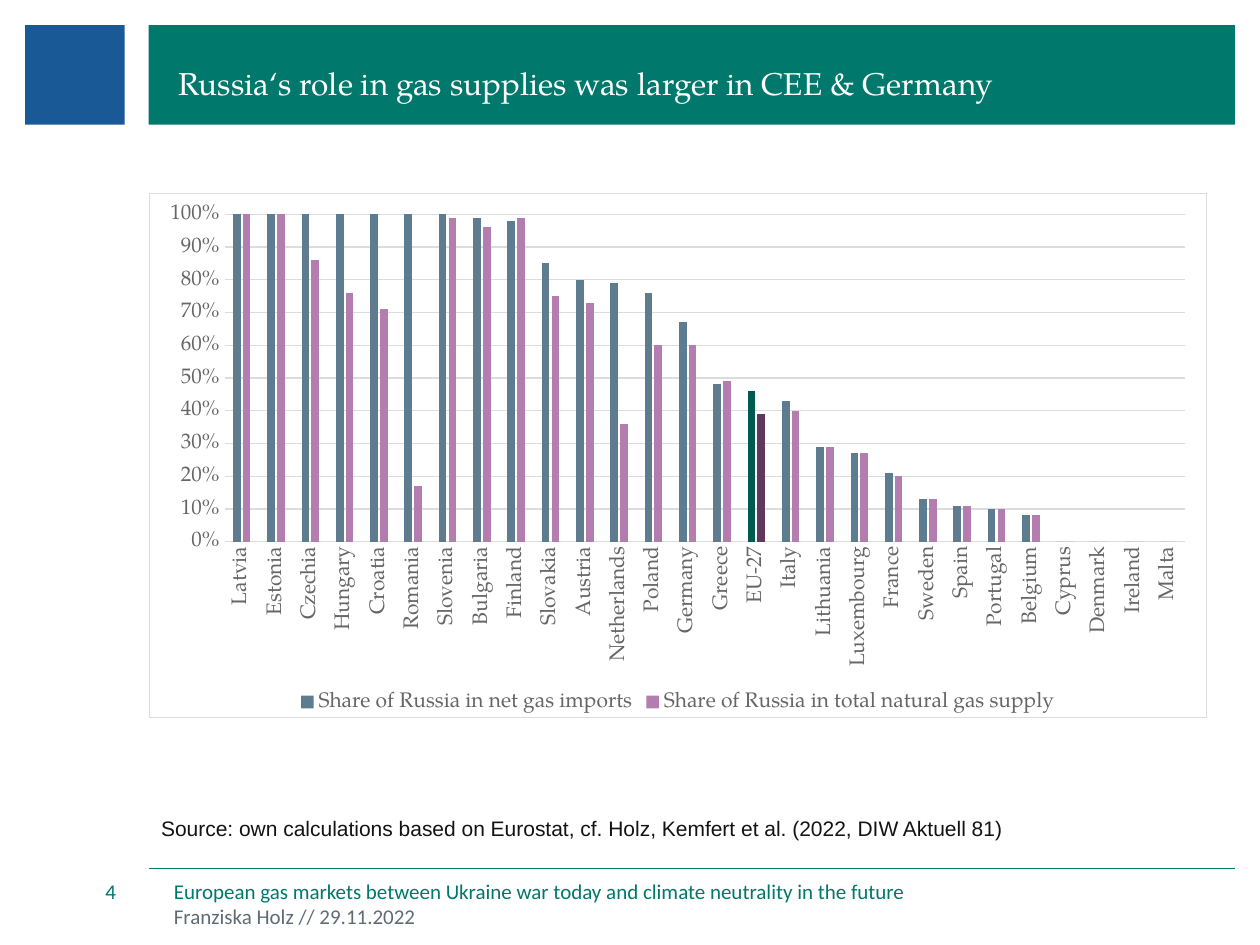
from lxml import etree
from pptx import Presentation
from pptx.chart.data import CategoryChartData
from pptx.dml.color import RGBColor
from pptx.enum.chart import XL_CHART_TYPE as CT, XL_LEGEND_POSITION as LP, XL_TICK_MARK as TM
from pptx.enum.shapes import MSO_CONNECTOR as CONN, MSO_SHAPE as SHAPE
from pptx.enum.text import MSO_ANCHOR as ANCHOR, MSO_AUTO_SIZE as AUTO, PP_ALIGN as ALIGN
from pptx.oxml import parse_xml
from pptx.oxml.ns import nsdecls, qn
from pptx.util import Inches, Pt

SERIF = "TeX Gyre Pagella"
GREEN, GREY, RULE = "00786B", "666666", "DCDCDC"


def rgb(value):
    return RGBColor.from_string(value)


def write(sp, text, size=12, font="Calibri", color=GREEN, align=ALIGN.LEFT,
          anchor=ANCHOR.TOP, wrap=True, inset=(0, 0)):
    tf = sp.text_frame
    tf.auto_size = AUTO.NONE
    tf.word_wrap = wrap
    tf.vertical_anchor = anchor
    tf.margin_left = tf.margin_right = Inches(inset[0])
    tf.margin_top = tf.margin_bottom = Inches(inset[1])
    p = tf.paragraphs[0]
    p.alignment = align
    r = p.add_run()
    r.text = text
    r.font.size, r.font.name = Pt(size), font
    r.font.color.rgb = rgb(color)


prs = Presentation()
prs.slide_width, prs.slide_height = Inches(10), Inches(7.5)
s = prs.slides.add_slide(prs.slide_layouts[5])

# Header blocks
for left, width, color in [(0.2, 0.79, "195A96"), (1.18, 8.62, GREEN)]:
    sp = s.shapes.add_shape(SHAPE.RECTANGLE, Inches(left), Inches(0.2), Inches(width), Inches(0.79))
    sp.shadow.inherit = False
    sp.fill.solid()
    sp.fill.fore_color.rgb = rgb(color)
    sp.line.fill.background()

# Footer rule
rule = s.shapes.add_connector(CONN.STRAIGHT, Inches(1.18), Inches(6.89), Inches(9.8), Inches(6.89))
rule.line.color.rgb = rgb(GREEN)
rule.line.width = Pt(0.5)
etree.SubElement(rule._element.spPr, qn("a:effectLst"))

# Title, brought in front of its band
title = s.shapes.title
title.left, title.top, title.width, title.height = map(Inches, (1.42, 0.33, 8.17, 0.48))
write(title, "Russia‘s role in gas supplies was larger in CEE & Germany", size=18, font=SERIF,
      color="FFFFFF", anchor=ANCHOR.BOTTOM, wrap=False)
s.shapes._spTree.append(title._element)

# Footer and source note
notes = [
    ((1.38, 7.17, 6.66, 0.2), "Franziska Holz // 29.11.2022", dict(color="5F6C73")),
    ((0.17, 6.97, 0.75, 0.2), "4", dict(align=ALIGN.RIGHT, anchor=ANCHOR.MIDDLE)),
    ((1.38, 6.97, 6.67, 0.2),
     "European gas markets between Ukraine war today and climate neutrality in the future", {}),
    ((1.18, 6.42, 6.95, 0.3),
     "Source: own calculations based on Eurostat, cf. Holz, Kemfert et al. (2022, DIW Aktuell 81)",
     dict(font="Arial", color="131313", wrap=False, inset=(0.1, 0.05))),
]
for box, text, style in notes:
    write(s.shapes.add_textbox(*map(Inches, box)), text, **style)

# Chart data: country, share in net imports, share in total supply
shares = [
    ("Latvia", 1, 1), ("Estonia", 1, 1), ("Czechia", 1, 0.86), ("Hungary", 1, 0.76),
    ("Croatia", 1, 0.71), ("Romania", 1, 0.17), ("Slovenia", 1, 0.99), ("Bulgaria", 0.99, 0.96),
    ("Finland", 0.98, 0.99), ("Slovakia", 0.85, 0.75), ("Austria", 0.8, 0.73),
    ("Netherlands", 0.79, 0.36), ("Poland", 0.76, 0.6), ("Germany", 0.67, 0.6),
    ("Greece", 0.48, 0.49), ("EU-27", 0.46, 0.39), ("Italy", 0.43, 0.4),
    ("Lithuania", 0.29, 0.29), ("Luxembourg", 0.27, 0.27), ("France", 0.21, 0.2),
    ("Sweden", 0.13, 0.13), ("Spain", 0.11, 0.11), ("Portugal", 0.1, 0.1),
    ("Belgium", 0.08, 0.08), ("Cyprus", 0, 0), ("Denmark", 0, 0), ("Ireland", 0, 0), ("Malta", 0, 0),
]
countries, imports, supply = zip(*shares)
data = CategoryChartData(number_format="0%")
data.categories = countries
data.add_series("Share of Russia in net gas imports", imports)
data.add_series("Share of Russia in total natural gas supply", supply)
chart = s.shapes.add_chart(CT.COLUMN_CLUSTERED, Inches(1.18), Inches(1.53),
                           Inches(8.4), Inches(4.17), data).chart
chart.has_title = False
chart.has_legend = True
chart.legend.position = LP.BOTTOM
chart.legend.include_in_layout = False

# Columns, with EU-27 highlighted
plot = chart.plots[0]
plot.gap_width, plot.overlap, plot.vary_by_categories = 219, -27, False
colors = [("5E7C8F", "005A50"), ("B47DAF", "61385D")]
for series, (color, highlight) in zip(plot.series, colors):
    eu = series.points[countries.index("EU-27")]
    for part, fill in [(series, color), (eu, highlight)]:
        part.format.fill.solid()
        part.format.fill.fore_color.rgb = rgb(fill)

# Axes and fonts
cat, val = chart.category_axis, chart.value_axis
for axis in (cat, val):
    axis.major_tick_mark = axis.minor_tick_mark = TM.NONE
val.minimum_scale, val.maximum_scale, val.major_unit = 0, 1, 0.1
val.tick_labels.number_format = "0%"
val.tick_labels.number_format_is_linked = False
val.format.line.fill.background()
for line in (cat.format.line, val.major_gridlines.format.line):
    line.color.rgb = rgb(RULE)
    line.width = Pt(0.75)
for font, size, color in [(chart.font, 10, "131313"), (cat.tick_labels.font, 12, GREY),
                          (val.tick_labels.font, 12, GREY), (chart.legend.font, 12, GREY)]:
    font.size, font.name = Pt(size), SERIF
    font.color.rgb = rgb(color)
cat_body = cat._element.find(qn("c:txPr")).find(qn("a:bodyPr"))
cat_body.set("rot", "-5400000")
cat_body.set("vert", "horz")

# Chart background and border
chart._chartSpace.find(qn("c:chart")).addnext(parse_xml(
    f'<c:spPr {nsdecls("c", "a")}><a:solidFill><a:srgbClr val="FFFFFF"/></a:solidFill>'
    f'<a:ln w="{Pt(0.75)}"><a:solidFill><a:srgbClr val="{RULE}"/></a:solidFill></a:ln></c:spPr>'))

prs.save("out.pptx")
